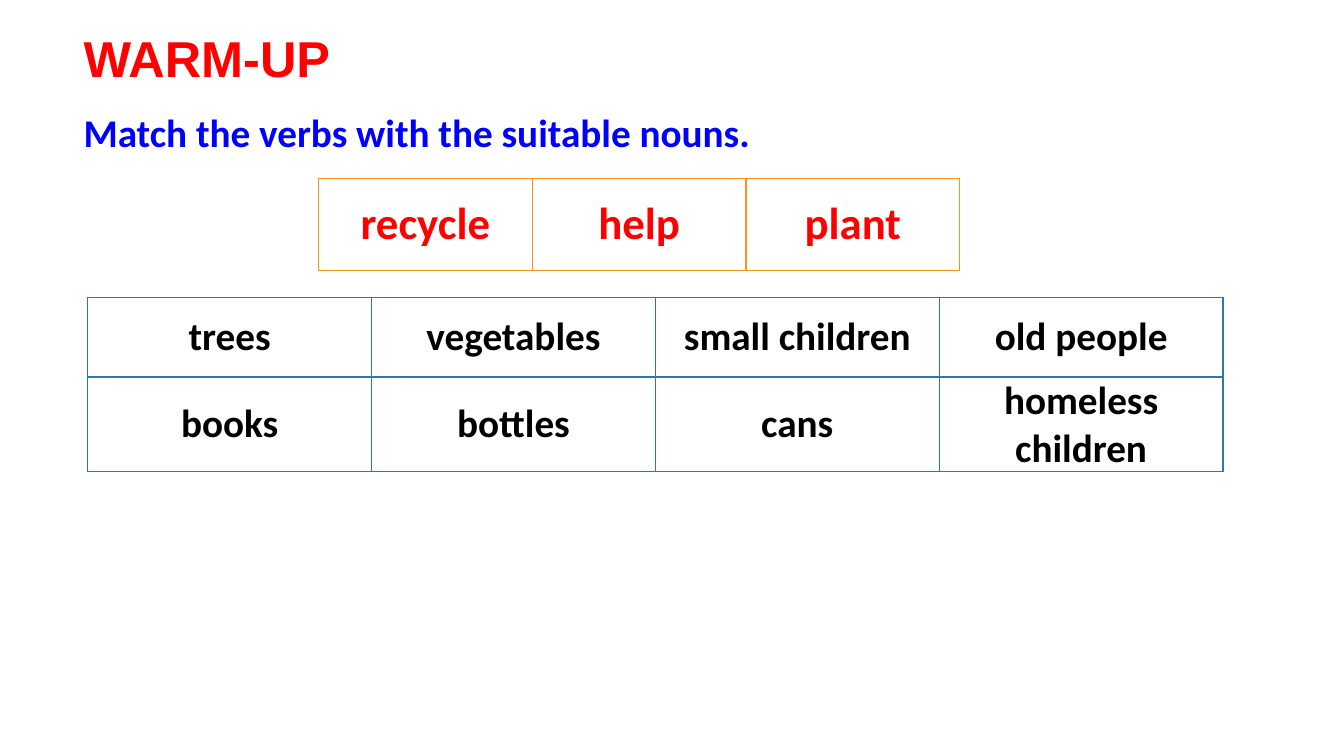
from lxml import etree
from pptx import Presentation
from pptx.dml.color import RGBColor
from pptx.enum.text import MSO_ANCHOR, MSO_AUTO_SIZE, PP_ALIGN
from pptx.oxml.ns import qn
from pptx.util import Emu, Pt

PX = 9144  # 100 px to the inch
LEFT, CENTER = PP_ALIGN.LEFT, PP_ALIGN.CENTER
TOP, MIDDLE = MSO_ANCHOR.TOP, MSO_ANCHOR.MIDDLE
FIT_SHAPE = MSO_AUTO_SIZE.SHAPE_TO_FIT_TEXT
COLORS = {
    "red": "FF0000",
    "blue": "0000FF",
    "black": "000000",
    "verb_border": "F7941E",
    "noun_border": "2E75B6",
}
VERBS = [["recycle", "help", "plant"]]
NOUNS = [
    ["trees", "vegetables", "small children", "old people"],
    ["books", "bottles", "cans", "homeless children"],
]


def px(n):
    return Emu(n * PX)


def write(tf, text, size, color, font="Calibri", align=LEFT):
    tf.text = text
    p = tf.paragraphs[0]
    p.alignment = align
    p.font.name = font
    p.font.size = Pt(size)
    p.font.bold = True
    p.font.color.rgb = RGBColor.from_string(COLORS[color])


def place_line(sp, box, text, size, color, font="Calibri"):
    """Put one left-aligned line of text in the given box."""
    sp.left, sp.top, sp.width, sp.height = map(px, box)
    tf = sp.text_frame
    tf.word_wrap = True
    tf.auto_size = FIT_SHAPE
    tf.vertical_anchor = TOP
    write(tf, text, size, color, font)


def add_borders(cell, color):
    tcPr = cell._tc.get_or_add_tcPr()
    for side in ("lnL", "lnR", "lnT", "lnB"):
        ln = etree.SubElement(tcPr, qn(f"a:{side}"), w=str(Pt(1)))
        fill = etree.SubElement(ln, qn("a:solidFill"))
        etree.SubElement(fill, qn("a:srgbClr"), val=COLORS[color])


def add_word_table(s, box, words, row_heights, size, color, border):
    """Draw a bordered grid of words with equal columns."""
    x, y, w, h = map(px, box)
    table = s.shapes.add_table(len(words), len(words[0]), x, y, w, h).table
    table.first_row = table.horz_banding = False
    for row, height in zip(table.rows, row_heights):
        row.height = px(height)
    for row, row_words in zip(table.rows, words):
        for cell, word in zip(row.cells, row_words):
            cell.margin_left = cell.margin_right = px(7)
            cell.margin_top = cell.margin_bottom = 0
            cell.vertical_anchor = MIDDLE
            add_borders(cell, border)
            cell.fill.background()
            write(cell.text_frame, word, size, color, align=CENTER)


def build_warm_up(prs):
    s = prs.slides.add_slide(prs.slide_layouts.get_by_name("Title Only"))
    # Heading and instruction
    place_line(s.shapes.title, (73, 22, 335, 71), "WARM-UP", 36, "red", "Arial")
    place_line(s.shapes.add_textbox(0, 0, 0, 0), (73, 103, 1031, 57),
               "Match the verbs with the suitable nouns.", 28, "blue")
    # Verbs and the nouns to match
    add_word_table(s, (316, 177, 636, 91), VERBS, [91], 32, "red", "verb_border")
    add_word_table(s, (87, 295, 1126, 159), NOUNS, [79, 80], 28, "black", "noun_border")


def main():
    prs = Presentation()
    prs.slide_width, prs.slide_height = px(1333), px(750)
    build_warm_up(prs)
    prs.save("out.pptx")


if __name__ == "__main__":
    main()
